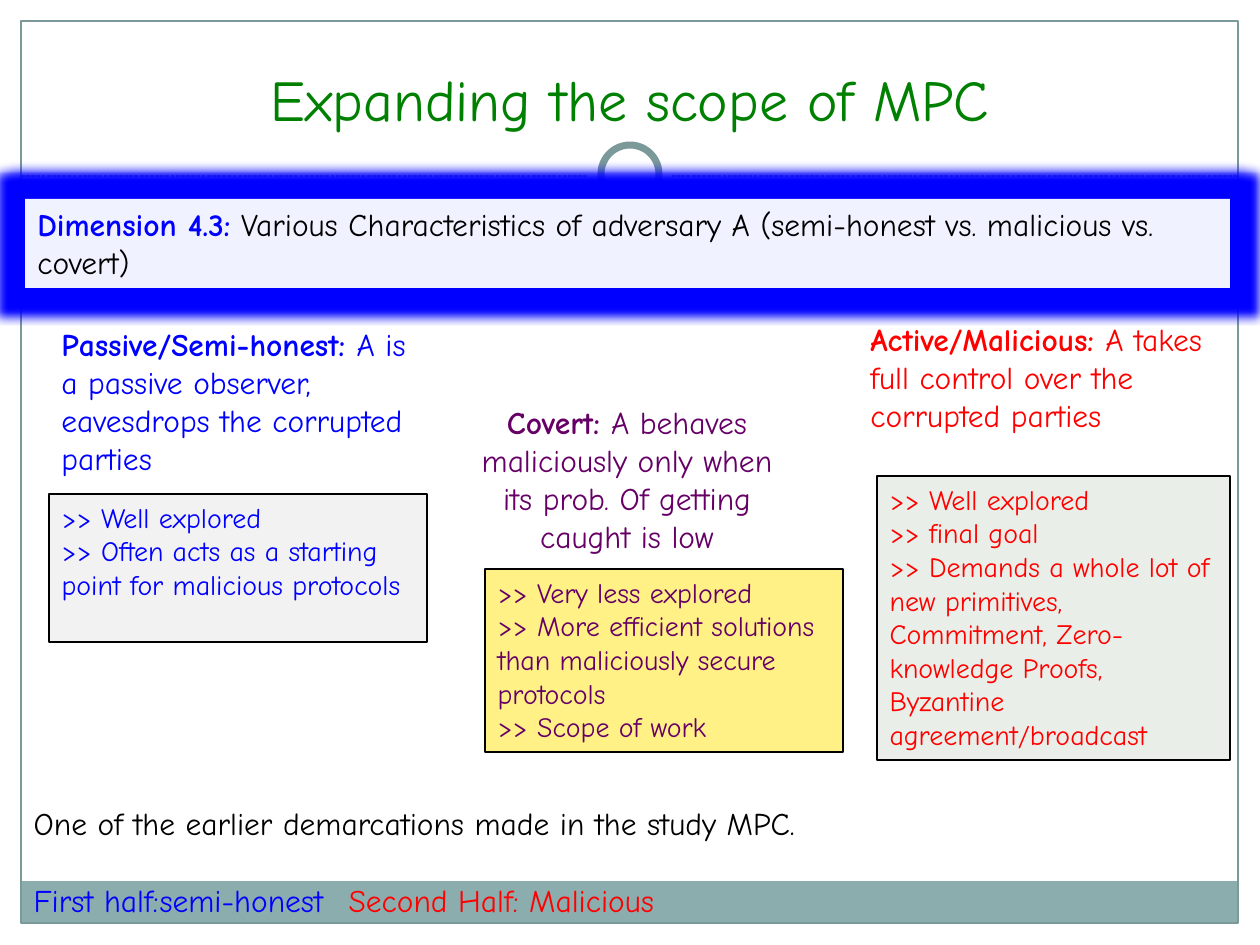
from lxml import etree
from pptx import Presentation
from pptx.dml.color import RGBColor
from pptx.enum.dml import MSO_LINE
from pptx.enum.shapes import MSO_CONNECTOR, MSO_SHAPE
from pptx.enum.text import MSO_ANCHOR as ANCHOR, MSO_AUTO_SIZE, PP_ALIGN as ALIGN
from pptx.oxml.ns import qn
from pptx.util import Pt

PX = 914400 / 126
FONT = "Comic Neue"
COLORS = {
    "white": "FFFFFF", "black": "000000", "frame": "7C999A", "footer": "8CADAE",
    "title": "008000", "blue": "0000FF", "red": "FF0000", "purple": "660066",
    "pale blue": "F0F2FF", "gray": "F2F2F2", "sage": "E9EFE8", "yellow": "FFF185",
}


def emu(px):
    return round(px * PX)


def rgb(name):
    return RGBColor.from_string(COLORS[name])


def write(frame, paragraphs, size=18, align=ALIGN.LEFT, anchor=ANCHOR.TOP, gap=0):
    """Fill a frame; each paragraph is a list of (text, color, bold) runs."""
    frame.word_wrap = True
    frame.auto_size = MSO_AUTO_SIZE.NONE
    frame.vertical_anchor = anchor
    for i, runs in enumerate(paragraphs):
        para = frame.add_paragraph() if i else frame.paragraphs[0]
        para.alignment = align
        para.space_before = Pt(gap if i else 0)
        props = para._p.get_or_add_pPr()
        props.set("marL", "0")
        props.set("indent", "0")
        etree.SubElement(props, qn("a:buNone"))
        for text, color, bold in runs:
            run = para.add_run()
            run.text = text
            run.font.name, run.font.size, run.font.bold = FONT, Pt(size), bold
            run.font.color.rgb = rgb(color)


class SlideBuilder:
    def __init__(self, slide):
        self.slide = slide
        self.shapes = slide.shapes

    def paint(self, shape, fill=None, line=None, width=0.75):
        if fill:
            shape.fill.solid()
            shape.fill.fore_color.rgb = rgb(fill)
        else:
            shape.fill.background()
        if line:
            shape.line.color.rgb = rgb(line)
            shape.line.width = Pt(width)
        else:
            shape.line.fill.background()

    def shape(self, box, kind=MSO_SHAPE.RECTANGLE, **style):
        shape = self.shapes.add_shape(kind, *map(emu, box))
        shape.shadow.inherit = False
        self.paint(shape, **style)
        return shape

    def dashed_line(self, x1, x2, y, color):
        line = self.shapes.add_connector(MSO_CONNECTOR.STRAIGHT, *map(emu, (x1, y, x2, y)))
        line.line.color.rgb = rgb(color)
        line.line.width = Pt(0.75)
        line.line.dash_style = MSO_LINE.SQUARE_DOT
        etree.SubElement(line._element.spPr, qn("a:effectLst"))

    def glow(self, shape, color, radius):
        effects = shape._element.spPr.find(qn("a:effectLst"))
        glow = etree.SubElement(effects, qn("a:glow"), rad=str(emu(radius)))
        etree.SubElement(glow, qn("a:srgbClr"), val=COLORS[color])

    def text(self, box, paragraphs, **style):
        write(self.shapes.add_textbox(*map(emu, box)).text_frame, paragraphs, **style)

    def placeholder(self, idx, box, paragraphs, fill=None, line=None, **style):
        holder = self.slide.placeholders[idx]
        holder.left, holder.top, holder.width, holder.height = map(emu, box)
        self.paint(holder, fill, line)
        write(holder.text_frame, paragraphs, **style)
        self.shapes._spTree.append(holder._element)  # in front of the frame
        return holder

    def tab_stops(self, para, stops):
        props = para._p.get_or_add_pPr()
        tabs = etree.SubElement(props, qn("a:tabLst"))
        for px, side in stops:
            etree.SubElement(tabs, qn("a:tab"), pos=str(emu(px)), algn=side)


def main():
    prs = Presentation()
    prs.slide_width, prs.slide_height = emu(1260), emu(945)
    comparison_layout = prs.slide_layouts[4]
    page = SlideBuilder(prs.slides.add_slide(comparison_layout))

    # Background bands, frame and ring
    for band in [(0, 0, 1260, 192), (0, 0, 21, 945), (1239, 0, 21, 945)]:
        page.shape(band, fill="white")
    page.shape((21, 881, 1217, 43), fill="footer")
    page.shape((21, 21, 1217, 902), line="frame")
    page.dashed_line(21, 1239, 176, "frame")
    page.shape((588, 132, 84, 84), MSO_SHAPE.OVAL, fill="white")
    page.shape((601, 145, 58, 58), MSO_SHAPE.OVAL, fill="white", line="frame", width=4)

    # Title and glowing dimension box
    page.placeholder(0, (87, 23, 1086, 116), [[("Expanding the scope of MPC", "title", False)]],
                     size=33, align=ALIGN.CENTER, anchor=ANCHOR.BOTTOM)
    dimension = page.shape((25, 199, 1205, 89), fill="pale blue")
    page.glow(dimension, "blue", 19)
    write(dimension.text_frame, [[
        ("Dimension 4.3:", "blue", True),
        (" Various Characteristics of adversary A (semi-honest vs. malicious vs. covert)",
         "black", False)]])

    # Adversary types: a definition above a list of remarks
    adversaries = [
        ("Passive/Semi-honest: ", "A is a passive observer, eavesdrops the corrupted parties",
         "blue", ALIGN.LEFT, (49, 319, 378, 165), "gray", (49, 494, 378, 148),
         [">> Well explored", ">> Often acts as a starting point for malicious protocols"]),
        ("Covert: ", "A behaves maliciously only when its prob. Of getting caught is low",
         "purple", ALIGN.CENTER, (461, 397, 332, 165), "yellow", (485, 569, 358, 183),
         [">> Very less explored",
          ">> More efficient solutions than maliciously secure protocols",
          ">> Scope of work"]),
        ("Active/Malicious: ", "A takes full control over the corrupted parties",
         "red", ALIGN.LEFT, (858, 314, 372, 127), "sage", (877, 476, 353, 284),
         [">> Well explored", ">> final goal",
          ">> Demands a whole lot of new primitives, Commitment, Zero-knowledge Proofs, "
          "Byzantine agreement/broadcast"]),
    ]
    for idx, (name, meaning, color, align, text_box, fill, list_box, remarks) in enumerate(
            adversaries, start=1):
        page.text(text_box, [[(name, color, True), (meaning, color, False)]], align=align)
        page.placeholder(idx, list_box, [[(remark, color, False)] for remark in remarks],
                         fill=fill, line="black", size=16)

    # Closing remark and the two halves in the footer band
    closing = page.placeholder(4, (21, 798, 1210, 127), [
        [("One of the earlier demarcations made in the study MPC.", "black", False)],
        [("First half:\tsemi-honest", "blue", False),
         ("\tSecond Half: Malicious", "red", False)]], gap=22)
    page.tab_stops(closing.text_frame.paragraphs[1], [(156, "l"), (1172, "r")])

    prs.save("out.pptx")


if __name__ == "__main__":
    main()
